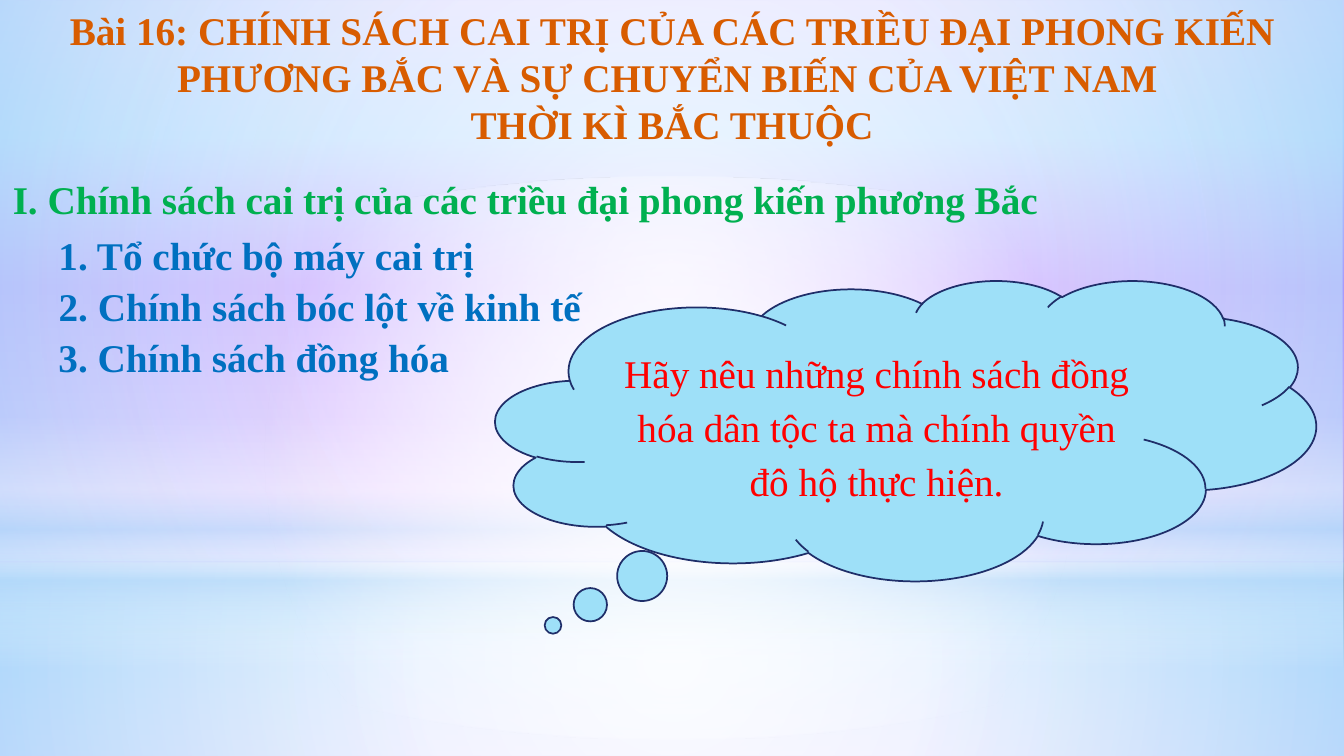
from lxml import etree
from pptx import Presentation
from pptx.dml.color import RGBColor
from pptx.enum.shapes import MSO_SHAPE
from pptx.enum.text import MSO_ANCHOR, MSO_AUTO_SIZE, PP_ALIGN
from pptx.oxml.ns import qn
from pptx.util import Pt

RECT, OVAL = MSO_SHAPE.RECTANGLE, MSO_SHAPE.OVAL
ROUNDED, CLOUD = MSO_SHAPE.ROUNDED_RECTANGLE, MSO_SHAPE.CLOUD_CALLOUT
LEFT, CENTER, MIDDLE = PP_ALIGN.LEFT, PP_ALIGN.CENTER, MSO_ANCHOR.MIDDLE
COLORS = {
    "title": "D85C00", "section": "00B050", "item": "0070C0", "question": "FF0000",
    "cloud": "9EE0F8", "outline": "1F2E69",
    "white": "FFFFFF", "sky": "B4DCFA", "lavender": "CCCCFF",
    "blue": "99CCFF", "violet": "9966FF", "lilac": "CC99FF",
}
WIDTH, HEIGHT = 960, 540


def set_gradient(fill, owner, stops, circular=False):
    """Fill with stops of (position %, colour, opacity %), downward or from the centre."""
    fill.solid()
    solid = owner.find(".//" + qn("a:solidFill"))
    gradient = etree.Element(qn("a:gradFill"), rotWithShape="1")
    stop_list = etree.SubElement(gradient, qn("a:gsLst"))
    for position, color, opacity in stops:
        stop = etree.SubElement(stop_list, qn("a:gs"), pos=str(position * 1000))
        rgb = etree.SubElement(stop, qn("a:srgbClr"), val=COLORS[color])
        etree.SubElement(rgb, qn("a:alpha"), val=str(opacity * 1000))
    if circular:
        path = etree.SubElement(gradient, qn("a:path"), path="circle")
        etree.SubElement(path, qn("a:fillToRect"), l="50000", t="50000", r="50000", b="50000")
    else:
        etree.SubElement(gradient, qn("a:lin"), ang="5400000", scaled="0")
    solid.getparent().replace(solid, gradient)


def write(shape, lines, color, align=LEFT, bold=True):
    frame = shape.text_frame
    frame.word_wrap = True
    frame.text = "\n".join(lines)
    for paragraph in frame.paragraphs:
        paragraph.alignment = align
        font = paragraph.runs[0].font
        font.name, font.size, font.bold = "Times New Roman", Pt(28), bold
        font.color.rgb = RGBColor.from_string(COLORS[color])


prs = Presentation()
prs.slide_width, prs.slide_height = Pt(WIDTH), Pt(HEIGHT)
slide = prs.slides.add_slide(prs.slide_layouts[6])

# Background
set_gradient(slide.background.fill, slide.element, [
    (0, "lavender", 100), (18, "blue", 100), (38, "violet", 100),
    (66, "lilac", 100), (82, "blue", 100), (100, "lavender", 100)])

# Translucent layers: shape, top, height, circular, stops
layers = [
    (RECT, 402, 138, True, [(0, "white", 91), (37, "white", 76), (100, "sky", 79)]),
    (RECT, 0, 402, True, [(0, "white", 89), (48, "white", 62), (100, "sky", 79)]),
    (RECT, 297, 180, False, [(0, "white", 0), (29, "white", 30), (45, "sky", 40),
                             (55, "white", 26), (65, "sky", 60), (100, "white", 0)]),
    (OVAL, 126, 402, True, [(0, "white", 100), (56, "white", 0)]),
]
for kind, top, height, circular, stops in layers:
    layer = slide.shapes.add_shape(kind, 0, Pt(top), Pt(WIDTH), Pt(height))
    layer.shadow.inherit = False
    layer.line.fill.background()
    set_gradient(layer.fill, layer.element, stops, circular)

# Lesson title
title = slide.shapes.add_textbox(0, Pt(0.7), Pt(WIDTH), Pt(109))
write(title, ["Bài 16: CHÍNH SÁCH CAI TRỊ CỦA CÁC TRIỀU ĐẠI PHONG KIẾN "
              "PHƯƠNG BẮC VÀ SỰ CHUYỂN BIẾN CỦA VIỆT NAM ",
              "THỜI KÌ BẮC THUỘC"], "title", CENTER)
title.text_frame.auto_size = MSO_AUTO_SIZE.SHAPE_TO_FIT_TEXT

# Outline: text, colour, left, top, width, height
outline = [
    ("I. Chính sách cai trị của các triều đại phong kiến phương Bắc",
     "section", 0, 121, 829, 42),
    ("1. Tổ chức bộ máy cai trị", "item", 33, 164, 357, 36),
    ("2. Chính sách bóc lột về kinh tế", "item", 33, 200, 450, 37.5),
    ("3. Chính sách đồng hóa", "item", 33, 237.5, 357, 35.5),
]
for text, color, left, top, width, height in outline:
    heading = slide.shapes.add_shape(ROUNDED, Pt(left), Pt(top), Pt(width), Pt(height))
    heading.shadow.inherit = False
    heading.fill.background()
    heading.line.fill.background()
    heading.text_frame.vertical_anchor = MIDDLE
    write(heading, [text], color)

# Question in a thought cloud
question = slide.shapes.add_shape(CLOUD, Pt(354), Pt(200), Pt(586), Pt(214.5))
question.adjustments[0], question.adjustments[1] = -0.43, 0.65
question.shadow.inherit = False
question.fill.solid()
question.fill.fore_color.rgb = RGBColor.from_string(COLORS["cloud"])
question.line.color.rgb = RGBColor.from_string(COLORS["outline"])
question.line.width = Pt(1.25)
question.text_frame.vertical_anchor = MIDDLE
write(question, ["Hãy nêu những chính sách đồng hóa dân tộc ta mà chính quyền "
                 "đô hộ thực hiện."], "question", CENTER, bold=False)
question.text_frame.paragraphs[0].line_spacing = 1.15

prs.save("out.pptx")
